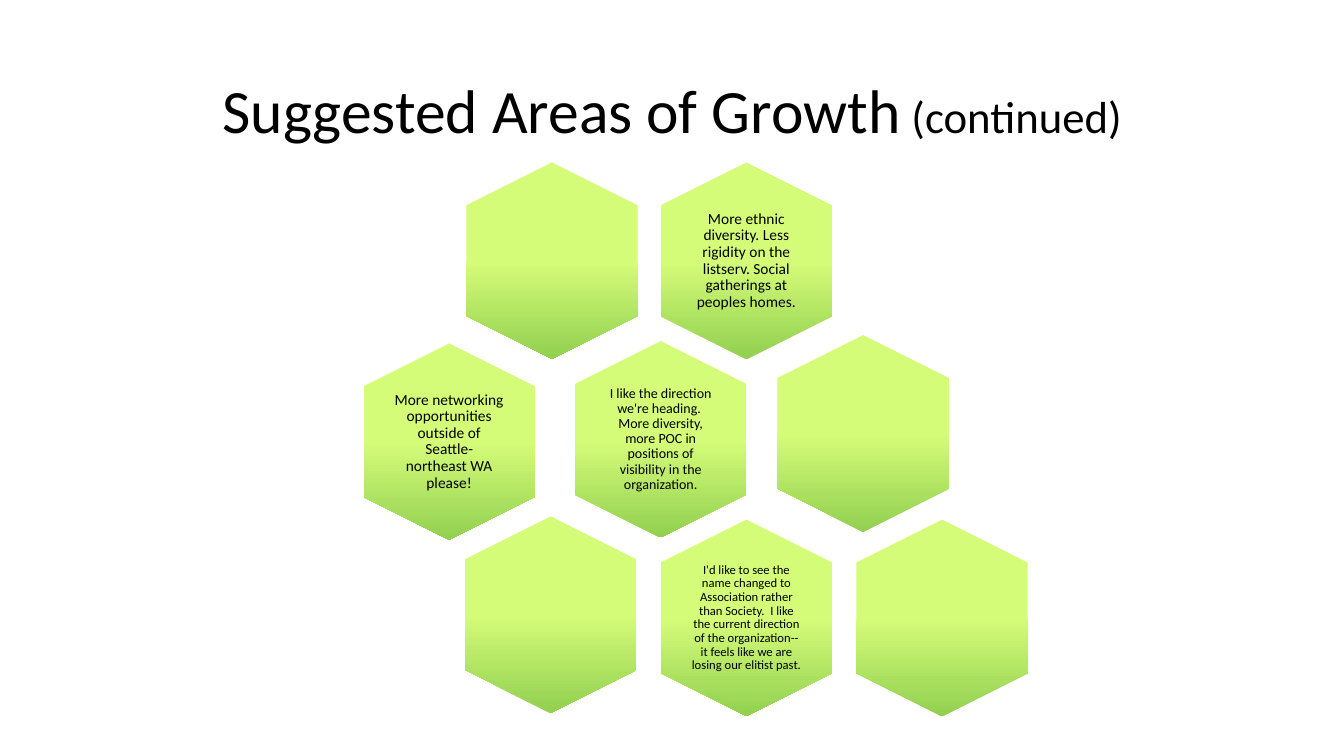
from copy import deepcopy

from pptx import Presentation
from pptx import util as u
from pptx.dml import color
from pptx.enum import shapes, text

COLORS = {"ink": "000000", "lime": "D5FC79", "green": "92D050"}
FONT = "Calibri"
HEX_LENGTH, HEX_WIDTH = 4.95, 4.32
COMMENT_WIDTH, COMMENT_HEIGHT = 2.97, 3.4

SUGGESTIONS = [
    (9.65, 2.48, 11, "More ethnic diversity. Less rigidity on the listserv. "
                     "Social gatherings at peoples homes."),
    (4.75, 2.48, None, None),
    (7.49, 6.98, 10, "I like the direction we're heading.  More diversity, more POC "
                     "in positions of visibility in the organization."),
    (12.59, 6.83, None, None),
    (9.65, 11.48, 9, "I'd like to see the name changed to Association rather than "
                     "Society.  I like the current direction of the organization-- "
                     "it feels like we are losing our elitist past."),
    (4.72, 11.4, None, None),
    (2.16, 7.04, 11, "More networking opportunities outside of Seattle- northeast "
                     "WA please!"),
    (14.58, 11.48, None, None),
]


def add_words(slide, box, runs, inset):
    """Write centred (words, size) runs in the middle of a box given in cm."""
    frame = slide.shapes.add_textbox(*map(u.Cm, box)).text_frame
    frame.word_wrap = True
    frame.vertical_anchor = text.MSO_ANCHOR.MIDDLE
    frame.margin_left = frame.margin_right = u.Cm(inset)
    frame.margin_top = frame.margin_bottom = u.Cm(inset)
    paragraph = frame.paragraphs[0]
    paragraph.alignment = text.PP_ALIGN.CENTER
    paragraph.line_spacing = 0.9
    for words, size in runs:
        run = paragraph.add_run()
        run.text = words
        run.font.name = FONT
        run.font.size = u.Pt(size)
        run.font.color.rgb = color.RGBColor.from_string(COLORS["ink"])


def add_title(slide, box):
    """Place the heading and its smaller continuation mark."""
    add_words(slide, box, [("Suggested Areas of Growth", 44), (" (continued)", 32)], 0.13)


def add_cell(slide, x, y):
    """Draw an upright shaded hexagon centred on a point."""
    cell = slide.shapes.add_shape(
        shapes.MSO_SHAPE.HEXAGON,
        u.Cm(x - HEX_LENGTH / 2), u.Cm(y - HEX_WIDTH / 2),
        u.Cm(HEX_LENGTH), u.Cm(HEX_WIDTH))
    cell.rotation = 90
    cell.shadow.inherit = False
    cell.line.fill.background()
    cell.fill.gradient()
    cell.fill.gradient_angle = 0
    stop_list = cell._element.spPr.gradFill.gsLst
    stop_list.insert(1, deepcopy(stop_list[0]))
    shades = [(0, "lime"), (0.5, "lime"), (1, "green")]
    for stop, (position, shade) in zip(cell.fill.gradient_stops, shades):
        stop.position = position
        stop.color.rgb = color.RGBColor.from_string(COLORS[shade])


def add_honeycomb(slide, left, top):
    """Lay out the suggestion hexagons from the top left corner of their region."""
    for dx, dy, size, comment in SUGGESTIONS:
        x, y = left + dx, top + dy
        add_cell(slide, x, y)
        if comment:
            box = (x - COMMENT_WIDTH / 2, y - COMMENT_HEIGHT / 2,
                   COMMENT_WIDTH, COMMENT_HEIGHT)
            add_words(slide, box, [(comment, size)], 0.11)


def main():
    """Build and save the slide."""
    deck = Presentation()
    deck.slide_width, deck.slide_height = u.Cm(33.87), u.Cm(19.05)
    slide = deck.slides.add_slide(deck.slide_layouts[6])
    add_title(slide, (2.34, 1.02, 29.21, 3.68))
    add_honeycomb(slide, 9.16, 4.09)
    deck.save("out.pptx")


if __name__ == "__main__":
    main()
